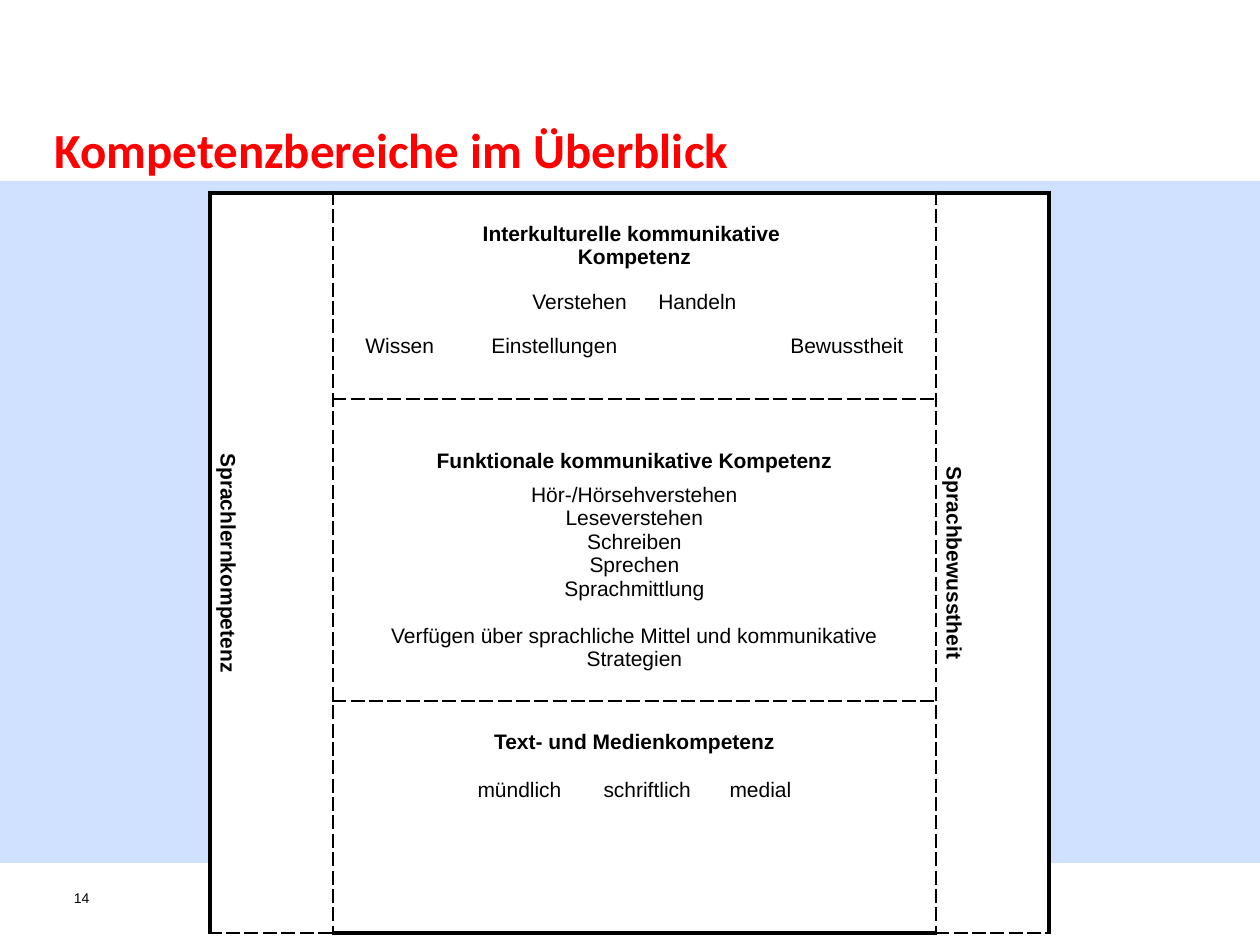
from lxml.etree import SubElement
from pptx import Presentation
from pptx.dml.color import RGBColor
from pptx.enum.shapes import MSO_SHAPE as Shape
from pptx.enum.text import MSO_ANCHOR as Anchor, PP_ALIGN as Align
from pptx.oxml.ns import qn
from pptx.util import Emu, Pt

PX = 914400 // 126
COLORS = {"ink": "000000", "paper": "FFFFFF", "title": "FF0000", "panel": "6699FF"}
SOLID, DASHED = (3, "solid"), (1, "dash")


def px(length):
    return Emu(length * PX)


def color(name):
    return RGBColor.from_string(COLORS[name])


def write(para, text, size=12, font="Arial", ink="ink", bold=False,
          align=Align.CENTER, before=0, after=0, line=None, tabs=()):
    if tabs:
        stops = SubElement(para._p.get_or_add_pPr(), qn("a:tabLst"))
        for stop in tabs:
            SubElement(stops, qn("a:tab"), pos=str(px(stop)), algn="l")
    para.alignment = align
    para.space_before, para.space_after = Pt(before), Pt(after)
    if line:
        para.line_spacing = line
    span = para.add_run()
    span.text = text
    span.font.size, span.font.name, span.font.bold = Pt(size), font, bold
    span.font.color.rgb = color(ink)


class Sheet:
    def __init__(self, deck):
        self.page = deck.slides.add_slide(deck.slide_layouts[6])

    def panel(self, left, top, width, height, fill, opacity):
        box = self.page.shapes.add_shape(
            Shape.RECTANGLE, px(left), px(top), px(width), px(height))
        box.shadow.inherit = False
        box.line.fill.background()
        box.fill.solid()
        box.fill.fore_color.rgb = color(fill)
        shade = box._element.spPr.find(".//" + qn("a:srgbClr"))
        SubElement(shade, qn("a:alpha"), val=str(opacity * 1000))

    def label(self, left, top, width, height, text, inset=True, **style):
        box = self.page.shapes.add_textbox(px(left), px(top), px(width), px(height))
        frame = box.text_frame
        frame.word_wrap = True
        if not inset:
            frame.margin_left = frame.margin_right = 0
            frame.margin_top = frame.margin_bottom = 0
        write(frame.paragraphs[0], text, align=Align.LEFT, **style)

    def grid(self, left, top, widths, heights):
        table = self.page.shapes.add_table(
            len(heights), len(widths), px(left), px(top),
            px(sum(widths)), px(sum(heights))).table
        table.first_row = table.horz_banding = False
        for column, width in zip(table.columns, widths):
            column.width = px(width)
        for row, height in zip(table.rows, heights):
            row.height = px(height)
        last_row, last_column = len(heights) - 1, len(widths) - 1
        for r in range(len(heights)):
            for c in range(len(widths)):
                cell = table.cell(r, c)
                self.border(cell, "L", SOLID if c == 0 else DASHED)
                self.border(cell, "R", SOLID if c == last_column else DASHED)
                self.border(cell, "T", SOLID if r == 0 else DASHED)
                self.border(cell, "B", SOLID if r == last_row else DASHED)
                cell.fill.solid()
                cell.fill.fore_color.rgb = color("paper")
        return table

    def border(self, cell, side, stroke):
        width, dash = stroke
        edge = SubElement(cell._tc.get_or_add_tcPr(), qn(f"a:ln{side}"), w=str(Pt(width)))
        fill = SubElement(edge, qn("a:solidFill"))
        SubElement(fill, qn("a:srgbClr"), val=COLORS["ink"])
        SubElement(edge, qn("a:prstDash"), val=dash)

    def area(self, cell, margin_top, lines):
        cell.margin_top = px(margin_top)
        frame = cell.text_frame
        for index, (text, style) in enumerate(lines):
            para = frame.add_paragraph() if index else frame.paragraphs[0]
            write(para, text, **style)

    def side(self, table, column, text, anchor, **style):
        cell = table.cell(0, column)
        cell.merge(table.cell(len(table.rows) - 1, column))
        cell._tc.get_or_add_tcPr().set("vert", "vert")
        cell.vertical_anchor = anchor
        write(cell.text_frame.paragraphs[0], text, bold=True, **style)


def main():
    deck = Presentation()
    deck.slide_width, deck.slide_height = px(1260), px(945)
    sheet = Sheet(deck)
    sheet.panel(0, 181, 1260, 682, "panel", 30)
    sheet.label(74, 890, 40, 47, "14", inset=False, size=8)

    table = sheet.grid(210, 193, [123, 603, 113], [206, 302, 232])
    sheet.side(table, 0, "Sprachlernkompetenz", Anchor.BOTTOM, after=6)
    sheet.side(table, 2, "Sprachbewusstheit", Anchor.TOP, after=6, line=2.0)

    spaced = {"before": 6, "after": 6}
    sheet.area(table.cell(0, 1), 29, [
        ("Interkulturelle kommunikative ", {"bold": True}),
        ("Kompetenz", {"bold": True, "after": 6}),
        ("Verstehen \tHandeln", spaced),
        ("Wissen\tEinstellungen\tBewusstheit", {**spaced, "tabs": (126, 425)}),
    ])
    skills = ["Hör-/Hörsehverstehen", "Leseverstehen", "Schreiben", "Sprechen",
              "Sprachmittlung"]
    sheet.area(table.cell(1, 1), 50, [
        ("Funktionale kommunikative Kompetenz", {"bold": True, "after": 6}),
        *[(skill, {}) for skill in skills],
        ("Verfügen über sprachliche Mittel und kommunikative Strategien",
         {"before": 13.5}),
    ])
    sheet.area(table.cell(2, 1), 30, [
        ("Text- und Medienkompetenz", {"bold": True}),
        ("mündlich\tschriftlich\tmedial", {"before": 13.5}),
    ])

    sheet.label(42, 113, 930, 72, "Kompetenzbereiche im Überblick",
                size=28, font="Calibri", ink="title", bold=True)
    deck.save("out.pptx")


if __name__ == "__main__":
    main()
